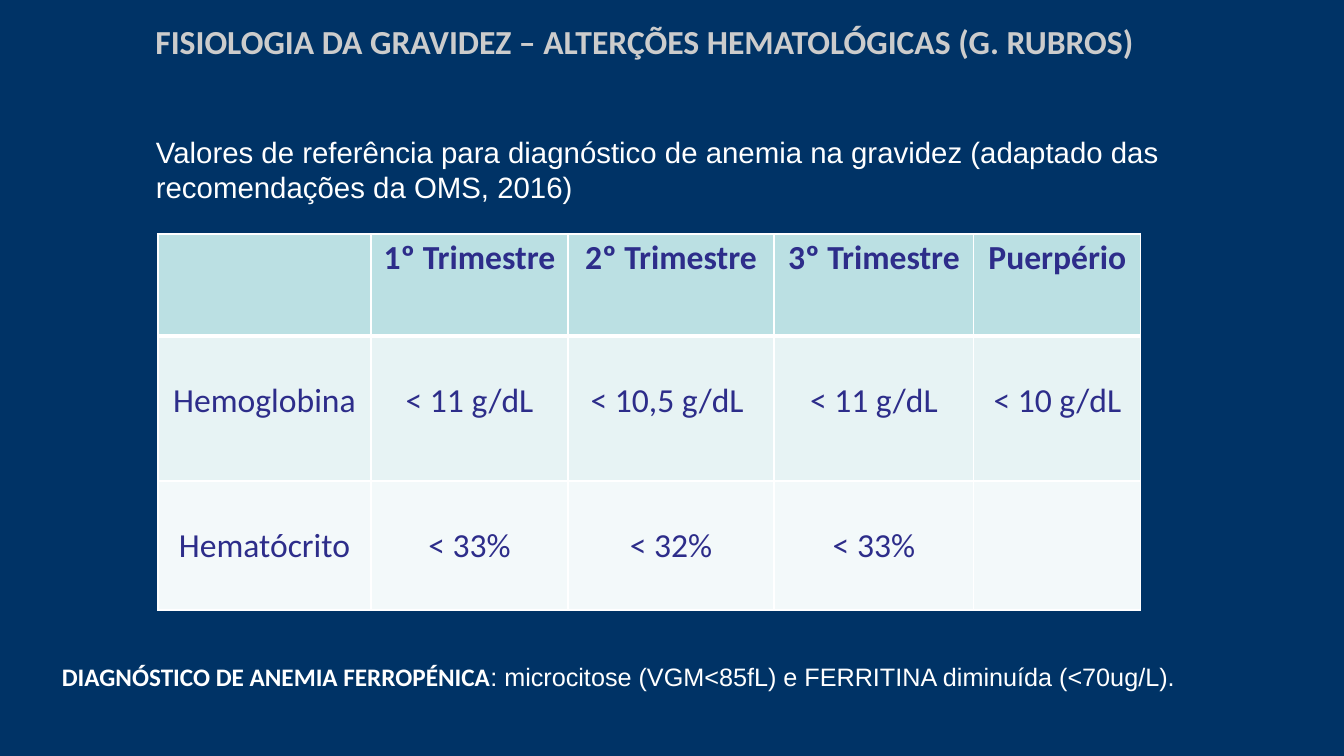
from lxml.etree import SubElement
from pptx import Presentation
from pptx.dml.color import RGBColor
from pptx.enum.text import MSO_ANCHOR as Anchor, MSO_AUTO_SIZE as AutoSize, PP_ALIGN as Align
from pptx.oxml.ns import qn
from pptx.util import Emu, Pt

NAVY, WHITE, SILVER, INDIGO = "003366", "FFFFFF", "CCCCCC", "2D2D8A"
ROW_FILLS = ["BBE0E3", "E7F3F4", "F3F9FA"]
COLUMN_WIDTHS = [213, 197, 206, 200, 167]
ROW_HEIGHTS = [102, 145, 129]
REFERENCE_VALUES = [
    ["", "1º Trimestre", "2º Trimestre", "3º Trimestre", "Puerpério"],
    ["Hemoglobina", "< 11 g/dL", "< 10,5 g/dL ", "< 11 g/dL", "< 10 g/dL"],
    ["Hematócrito", "< 33%", "< 32%", "< 33%", ""],
]


def px(length):
    return Emu(round(length * 914400 / 100.8))


def color(value):
    return RGBColor.from_string(value)


class SlideBuilder:
    def __init__(self, presentation):
        self.slide = presentation.slides.add_slide(presentation.slide_layouts[5])
        fill = self.slide.background.fill
        fill.solid()
        fill.fore_color.rgb = color(NAVY)

    def style(self, run, size, font="Arial", ink=WHITE, bold=False):
        run.font.name = font
        run.font.size = Pt(size)
        run.font.bold = bold
        run.font.color.rgb = color(ink)

    def title(self, text, left, top, width, height):
        shape = self.slide.shapes.title
        shape.left, shape.top, shape.width, shape.height = map(px, (left, top, width, height))
        text_frame = shape.text_frame
        text_frame.text = text
        text_frame.auto_size = AutoSize.NONE
        text_frame.vertical_anchor = Anchor.TOP
        paragraph = text_frame.paragraphs[0]
        paragraph.alignment = Align.CENTER
        self.style(paragraph.runs[0], 24, "Calibri", SILVER, True)

    def text(self, left, top, width, height, size, body, lead=""):
        shape = self.slide.shapes.add_textbox(*map(px, (left, top, width, height)))
        shape.text_frame.word_wrap = True
        paragraph = shape.text_frame.paragraphs[0]
        if lead:
            run = paragraph.add_run()
            run.text = lead
            self.style(run, size, "Calibri", bold=True)
        run = paragraph.add_run()
        run.text = body
        self.style(run, size)

    def borders(self, cell, top, bottom):
        properties = cell._tc.get_or_add_tcPr()
        for side, width in zip("LRTB", (1, 1, top, bottom)):
            line = SubElement(properties, qn(f"a:ln{side}"), w=str(Pt(width)))
            fill = SubElement(line, qn("a:solidFill"))
            SubElement(fill, qn("a:srgbClr"), val=WHITE)

    def cell(self, cell, text, row):
        header = row == 0
        self.borders(cell, top=3 if row == 1 else 1, bottom=3 if header else 1)
        cell.fill.solid()
        cell.fill.fore_color.rgb = color(ROW_FILLS[row])
        cell.margin_left = cell.margin_right = px(7)
        cell.margin_top = px(4 if header else 45)
        cell.margin_bottom = px(4)
        cell.text_frame.text = text
        paragraph = cell.text_frame.paragraphs[0]
        paragraph.alignment = Align.CENTER
        for run in paragraph.runs:
            self.style(run, 24, "Calibri", INDIGO, header)

    def table(self, left, top, values):
        size = sum(COLUMN_WIDTHS), sum(ROW_HEIGHTS)
        table = self.slide.shapes.add_table(
            len(values), len(values[0]), *map(px, (left, top, *size))).table
        for column, width in zip(table.columns, COLUMN_WIDTHS):
            column.width = px(width)
        for row, height in zip(table.rows, ROW_HEIGHTS):
            row.height = px(height)
        for row, texts in enumerate(values):
            for column, text in enumerate(texts):
                self.cell(table.cell(row, column), text, row)


def main():
    presentation = Presentation()
    presentation.slide_width, presentation.slide_height = px(1344), px(756)
    builder = SlideBuilder(presentation)

    # Title and introduction
    builder.title("FISIOLOGIA DA GRAVIDEZ – ALTERÇÕES HEMATOLÓGICAS (G. RUBROS)",
                  99, 16, 1091, 50)
    builder.text(146, 129, 1080, 82, 21,
                 "Valores de referência para diagnóstico de anemia na gravidez "
                 "(adaptado das recomendações da OMS, 2016)")

    # Reference values
    builder.table(158, 234, REFERENCE_VALUES)

    # Diagnosis note
    builder.text(52, 656, 1260, 40, 18,
                 ": microcitose (VGM<85fL) e FERRITINA diminuída (<70ug/L).",
                 lead="DIAGNÓSTICO DE ANEMIA FERROPÉNICA")

    presentation.save("out.pptx")


if __name__ == "__main__":
    main()
